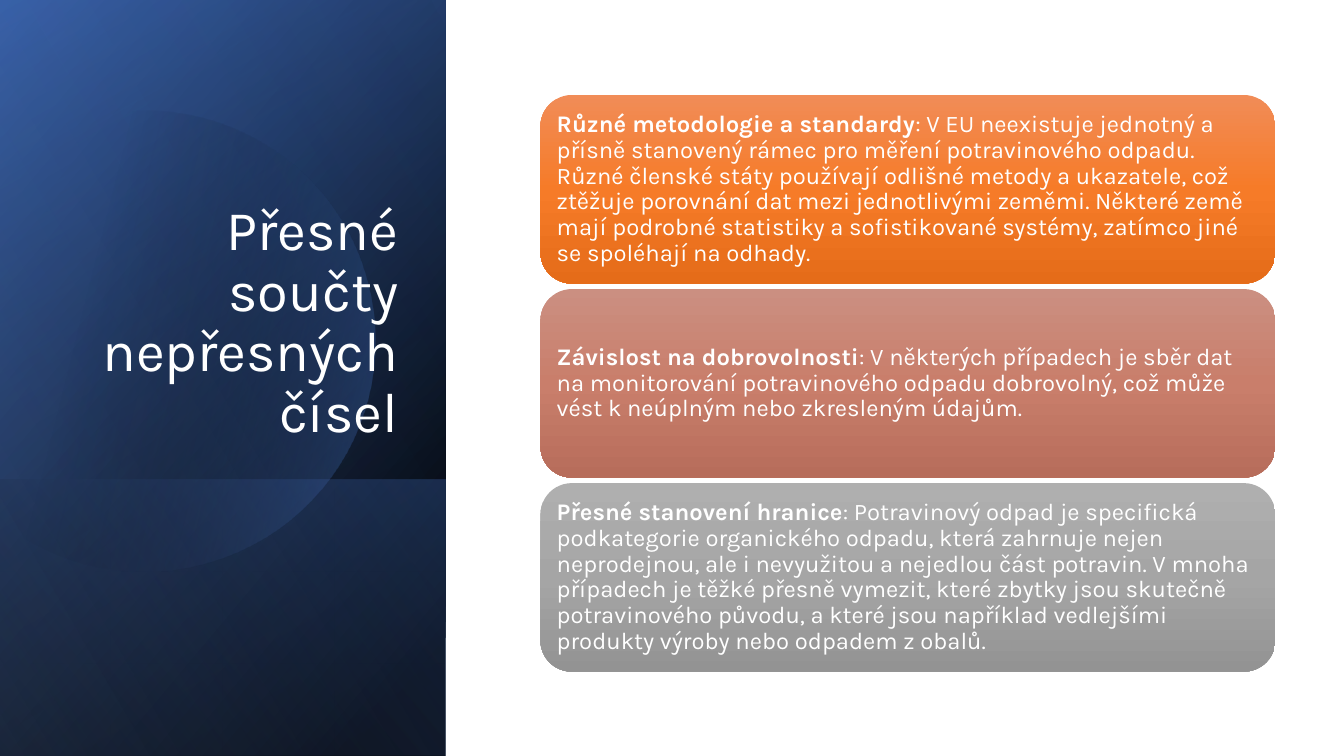
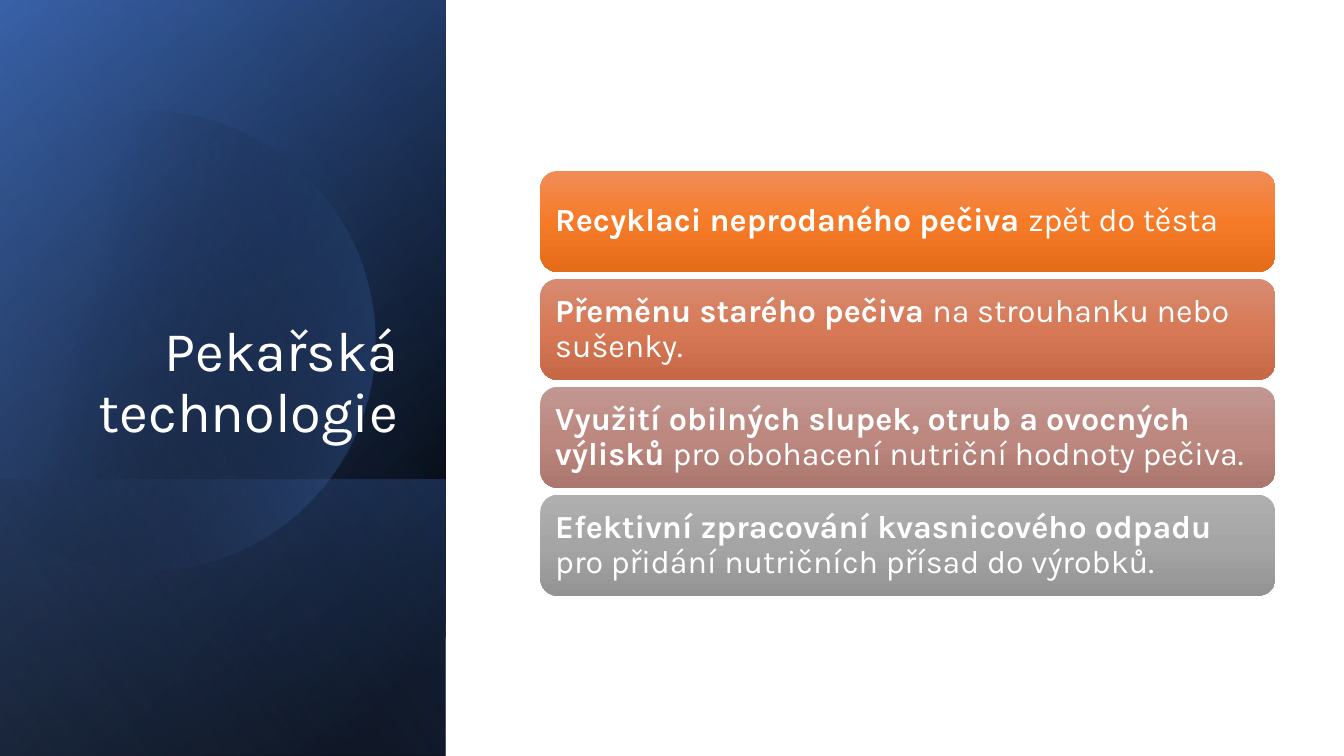
from dataclasses import dataclass
from typing import Any, NamedTuple

from lxml.etree import SubElement
from pptx import Presentation
from pptx.dml.color import RGBColor
from pptx.enum.shapes import MSO_SHAPE as Preset
from pptx.enum.text import MSO_ANCHOR as Anchor, PP_ALIGN as Align
from pptx.oxml.ns import qn
from pptx.util import Cm, Pt

COLOURS = {
    "white": "FFFFFF",
    "black": "000000",
    "navy": "2F5597",
    "blue": "4472C4",
    "mist": "8FAADC",
    "orange_light": "F18C57",
    "orange_mid": "F67B28",
    "orange_dark": "E56C19",
    "terracotta_light": "D78B72",
    "terracotta_mid": "D77956",
    "terracotta_dark": "C66846",
    "clay_light": "CB8F81",
    "clay_mid": "C97E6B",
    "clay_dark": "B76D5B",
    "rose_light": "C19791",
    "rose_mid": "BC8880",
    "rose_dark": "AA766E",
    "grey_light": "AFAFAF",
    "grey_mid": "A5A5A5",
    "grey_dark": "939393",
}
FONT = "Karla"
SLIDE_WIDTH, SLIDE_HEIGHT = 33.87, 19.05
PANEL_WIDTH = 11.23
CARD_LEFT, CARD_WIDTH, CARDS_MIDDLE = 13.62, 18.52, 9.66
CURVE_STEPS = 24


class Point(NamedTuple):
    x: float
    y: float


class Stop(NamedTuple):
    position: int
    colour: str
    opacity: int = 100


class Layer(NamedTuple):
    top: float
    height: float
    angle: int
    stops: list[Stop]


class Card(NamedTuple):
    tone: str
    lead: str
    rest: str


@dataclass(frozen=True)
class Topic:
    title: str
    card_height: float
    gap: float
    inset: float
    size: int
    cards: list[Card]


PANEL_BACK = [
    Layer(0, SLIDE_HEIGHT, 50, [Stop(8, "black"), Stop(100, "navy")]),
    Layer(0, SLIDE_HEIGHT, 30, [Stop(0, "black", 0), Stop(99, "blue", 46)]),
    Layer(12.09, 6.96, 130, [Stop(2, "blue", 29), Stop(100, "black", 30)]),
]
PANEL_SHEEN = Layer(0, SLIDE_HEIGHT, 120, [Stop(0, "black", 0), Stop(99, "mist", 11)])

DISC_START = Point(3.78, 2.79)
DISC_SEGMENTS = [
    [Point(6.25, 2.84), Point(8.51, 4.5), Point(9.22, 6.99)],
    [Point(10.11, 10.08), Point(8.33, 13.28), Point(5.26, 14.17)],
    [Point(3.33, 14.73), Point(1.35, 14.25), Point(-0.08, 13.06)],
    [Point(-0.38, 12.78)],
    [Point(-0.38, 4.45)],
    [Point(0, 4.09)],
    [Point(0.58, 3.61), Point(1.27, 3.25), Point(2.03, 3.02)],
    [Point(2.62, 2.87), Point(3.2, 2.79), DISC_START],
]
DISC_STOPS = [Stop(29, "black", 0), Stop(100, "blue", 43)]

TOPICS = [
    Topic("Přesné součty nepřesných čísel", 4.75, 0.14, 0.18, 17, [
        Card("orange", "Různé metodologie a standardy",
             ": V EU neexistuje jednotný a přísně stanovený rámec pro měření "
             "potravinového odpadu. Různé členské státy používají odlišné metody "
             "a ukazatele, což ztěžuje porovnání dat mezi jednotlivými zeměmi. "
             "Některé země mají podrobné statistiky a sofistikované systémy, "
             "zatímco jiné se spoléhají na odhady."),
        Card("clay", "Závislost na dobrovolnosti",
             ": V některých případech je sběr dat na monitorování potravinového "
             "odpadu dobrovolný, což může vést k neúplným nebo zkresleným údajům."),
        Card("grey", "Přesné stanovení hranice",
             ": Potravinový odpad je specifická podkategorie organického odpadu, "
             "která zahrnuje nejen neprodejnou, ale i nevyužitou a nejedlou část "
             "potravin. V mnoha případech je těžké přesně vymezit, které zbytky "
             "jsou skutečně potravinového původu, a které jsou například "
             "vedlejšími produkty výroby nebo odpadem z obalů."),
    ]),
    Topic("Pekařská technologie", 2.54, 0.18, 0.25, 23, [
        Card("orange", "Recyklaci neprodaného pečiva ", "zpět do těsta"),
        Card("terracotta", "Přeměnu starého pečiva", " na strouhanku nebo sušenky."),
        Card("rose", "Využití obilných slupek, otrub a ovocných výlisků",
             " pro obohacení nutriční hodnoty pečiva."),
        Card("grey", "Efektivní zpracování kvasnicového odpadu",
             " pro přidání nutričních přísad do výrobků."),
    ]),
]


def apply_format(target: Any, values: dict[str, Any]) -> None:
    for name, value in values.items():
        setattr(target, name, value)


def paint(shape: Any, stops: list[Stop], angle: int) -> None:
    shape.shadow.inherit = False
    shape.line.fill.background()
    shape.fill.gradient()
    shape.fill.gradient_angle = 360 - angle
    stop_list = shape.element.spPr.find(qn("a:gradFill")).find(qn("a:gsLst"))
    stop_list.clear()
    for stop in stops:
        mark = SubElement(stop_list, qn("a:gs"), pos=str(stop.position * 1000))
        colour = SubElement(mark, qn("a:srgbClr"), val=COLOURS[stop.colour])
        if stop.opacity < 100:
            SubElement(colour, qn("a:alpha"), val=str(stop.opacity * 1000))


def add_layer(slide: Any, layer: Layer) -> None:
    shift = (PANEL_WIDTH - layer.height) / 2
    band = slide.shapes.add_shape(
        Preset.RECTANGLE, Cm(shift), Cm(layer.top - shift),
        Cm(layer.height), Cm(PANEL_WIDTH))
    band.rotation = 90
    band.element.spPr.xfrm.set("flipH", "1")
    paint(band, layer.stops, layer.angle)


def curve_point(start: Point, controls: list[Point], t: float) -> Point:
    weights = ((1 - t) ** 3, 3 * t * (1 - t) ** 2, 3 * t ** 2 * (1 - t), t ** 3)
    corners = [start, *controls]
    return Point(sum(w * c.x for w, c in zip(weights, corners)),
                 sum(w * c.y for w, c in zip(weights, corners)))


def disc_outline() -> list[Point]:
    outline = [DISC_START]
    for segment in DISC_SEGMENTS:
        start = outline[-1]
        if len(segment) == 1:
            outline += segment
        else:
            outline += [curve_point(start, segment, step / CURVE_STEPS)
                        for step in range(1, CURVE_STEPS + 1)]
    return outline


def add_disc(slide: Any) -> None:
    first, *others = [(Cm(point.x), Cm(point.y)) for point in disc_outline()]
    builder = slide.shapes.build_freeform(*first)
    builder.add_line_segments(others, close=True)
    paint(builder.convert_to_shape(), DISC_STOPS, 14)


def write(shape: Any, runs: list[tuple[str, bool]], size: int, align: Any,
          frame_format: dict[str, Any]) -> None:
    frame = shape.text_frame
    apply_format(frame, {"word_wrap": True, **frame_format})
    paragraph = frame.paragraphs[0]
    apply_format(paragraph, {"alignment": align, "line_spacing": 0.9})
    for text, bold in runs:
        run = paragraph.add_run()
        run.text = text
        apply_format(run.font, {"name": FONT, "size": Pt(size), "bold": bold})
        run.font.color.rgb = RGBColor.from_string(COLOURS["white"])


def add_panel(slide: Any, title: str) -> None:
    for layer in PANEL_BACK:
        add_layer(slide, layer)
    add_disc(slide)
    add_layer(slide, PANEL_SHEEN)
    heading = slide.shapes.add_textbox(Cm(1.63), Cm(4.67), Cm(8.66), Cm(6.65))
    write(heading, [(title, False)], 40, Align.RIGHT,
          {"vertical_anchor": Anchor.BOTTOM})


def add_cards(slide: Any, topic: Topic) -> None:
    pitch = topic.card_height + topic.gap
    top = CARDS_MIDDLE - (len(topic.cards) * pitch - topic.gap) / 2
    margins = {f"margin_{side}": Cm(topic.inset)
               for side in ("left", "top", "right", "bottom")}
    for index, card in enumerate(topic.cards):
        tile = slide.shapes.add_shape(
            Preset.ROUNDED_RECTANGLE, Cm(CARD_LEFT), Cm(top + index * pitch),
            Cm(CARD_WIDTH), Cm(topic.card_height))
        shades = zip((0, 50, 100), ("light", "mid", "dark"))
        paint(tile, [Stop(at, f"{card.tone}_{shade}") for at, shade in shades], 90)
        write(tile, [(card.lead, True), (card.rest, False)], topic.size, Align.LEFT,
              {"vertical_anchor": Anchor.MIDDLE, **margins})


def main() -> None:
    deck = Presentation()
    apply_format(deck, {"slide_width": Cm(SLIDE_WIDTH),
                        "slide_height": Cm(SLIDE_HEIGHT)})
    for topic in TOPICS:
        slide = deck.slides.add_slide(deck.slide_layouts[6])
        add_panel(slide, topic.title)
        add_cards(slide, topic)
    deck.save("out.pptx")


if __name__ == "__main__":
    main()
